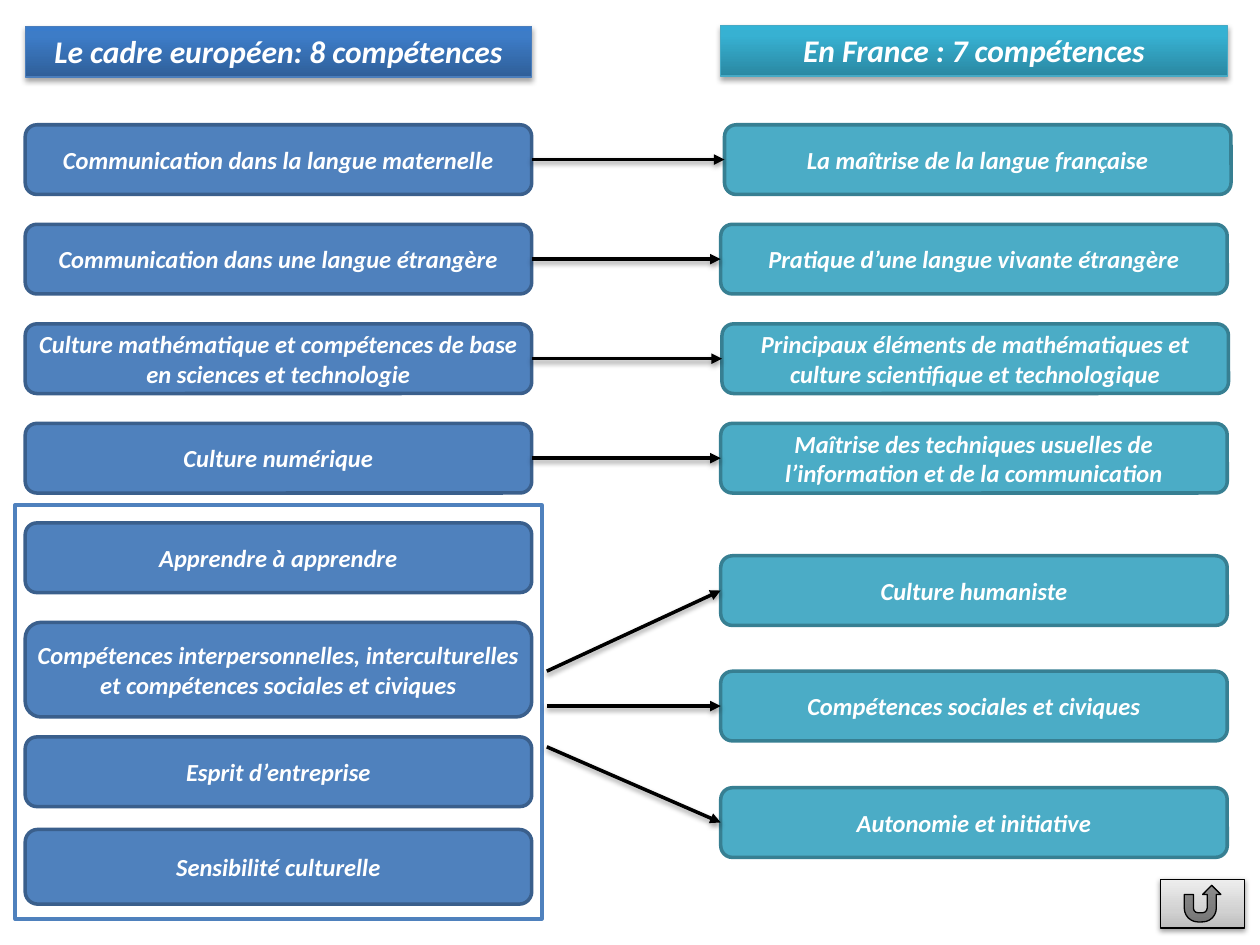
from lxml import etree
from pptx import Presentation
from pptx import util as u
from pptx.dml.color import RGBColor
from pptx.enum import shapes, text
from pptx.oxml.ns import qn


def color(value):
    return RGBColor.from_string(value)


class Board:
    """Style and current slide; lengths are grid columns and rows."""

    FONT = "Calibri"
    COLUMN, ROW = 1, 0.79  # inches
    TOP = 0.2              # top of row 0
    BOX_WIDTH = 4.02

    def __init__(self, slide):
        self.slide = slide

    def x(self, column):
        return u.Inches(column * self.COLUMN)

    def y(self, row):
        return u.Inches(self.TOP + row * self.ROW)

    def shape(self, kind, column, row, width, height, line, line_width):
        shape = self.slide.shapes.add_shape(
            kind, self.x(column), self.y(row),
            self.x(width), u.Inches(height * self.ROW))
        shape.shadow.inherit = False
        shape.line.color.rgb = color(line)
        shape.line.width = u.Pt(line_width)
        return shape

    def solid(self, shape, value):
        shape.fill.solid()
        shape.fill.fore_color.rgb = color(value)

    def gradient(self, shape, stops):
        shape.fill.gradient()
        shape.fill.gradient_angle = 90
        stop_list = shape._element.spPr.find(".//" + qn("a:gsLst"))
        for stop in list(stop_list):
            stop_list.remove(stop)
        for position, value in stops:
            stop = etree.SubElement(stop_list, qn("a:gs"), pos=str(position * 1000))
            etree.SubElement(stop, qn("a:srgbClr"), val=value)

    def shadow(self, properties, distance, opacity):
        effects = properties.find(qn("a:effectLst"))
        if effects is None:
            effects = etree.SubElement(properties, qn("a:effectLst"))
        shadow = etree.SubElement(
            effects, qn("a:outerShdw"), blurRad=str(u.Pt(3.1)),
            dist=str(u.Pt(distance)), dir="5400000", rotWithShape="0")
        black = etree.SubElement(shadow, qn("a:srgbClr"), val="000000")
        etree.SubElement(black, qn("a:alpha"), val=str(opacity * 1000))

    def label(self, shape, words, size):
        frame = shape.text_frame
        frame.word_wrap = True
        frame.text = words
        paragraph = frame.paragraphs[0]
        paragraph.alignment = text.PP_ALIGN.CENTER
        font = paragraph.runs[0].font
        font.name, font.size = self.FONT, u.Pt(size)
        font.bold = font.italic = True
        font.color.rgb = color("FFFFFF")
        return frame

    def frame(self, column, row, width, height, line):
        shape = self.shape(shapes.MSO_SHAPE.RECTANGLE, column, row, width, height, line, 2)
        self.solid(shape, "FFFFFF")

    def header(self, column, row, words, stops, line):
        shape = self.shape(shapes.MSO_SHAPE.RECTANGLE, column, row,
                           self.BOX_WIDTH, 0.51, line, 0.75)
        self.gradient(shape, stops)
        self.shadow(shape._element.spPr, 1.8, 35)
        frame = self.label(shape, words, 18)
        frame.vertical_anchor = text.MSO_ANCHOR.TOP
        frame.auto_size = text.MSO_AUTO_SIZE.SHAPE_TO_FIT_TEXT

    def box(self, column, row, words, fill, line, height=0.7):
        shape = self.shape(shapes.MSO_SHAPE.ROUNDED_RECTANGLE, column, row,
                           self.BOX_WIDTH, height, line, 2)
        self.solid(shape, fill)
        frame = self.label(shape, words, 14)
        frame.vertical_anchor = text.MSO_ANCHOR.MIDDLE
        frame.margin_left = frame.margin_right = u.Inches(0.04)
        return shape

    def arrow(self, target, source=None, start=(0, 0)):
        """Arrow to the left side of target, from a box or a grid point."""
        begin = self.x(start[0]), self.y(start[1])
        connector = self.slide.shapes.add_connector(
            shapes.MSO_CONNECTOR.STRAIGHT, *begin, *begin)
        if source is not None:
            connector.begin_connect(source, 3)
        connector.end_connect(target, 1)
        connector.line.color.rgb = color("000000")
        connector.line.width = u.Pt(2)
        outline = connector._element.spPr.find(qn("a:ln"))
        etree.SubElement(outline, qn("a:tailEnd"), type="triangle")
        self.shadow(connector._element.spPr, 1.6, 38)

    def return_button(self, column, row, width, height):
        shape = self.shape(shapes.MSO_SHAPE.ACTION_BUTTON_RETURN,
                           column, row, width, height, "000000", 0.75)
        self.gradient(shape, [(0, "BDBDBD"), (35, "D1D1D1"), (100, "EEEEEE")])
        self.shadow(shape._element.spPr, 1.6, 38)


LEFT, RIGHT = 0.2, 5.72
BLUE = ("4F81BD", "3A5F8C")
TEAL = ("4BACC6", "377F92")

# (row, words, height in rows)
EUROPE = [
    (1, "Communication dans la langue maternelle", 0.7),
    (2, "Communication dans une langue étrangère", 0.7),
    (3, "Culture mathématique et compétences de base en sciences et technologie", 0.7),
    (4, "Culture numérique", 0.7),
    (5, "Apprendre à apprendre", 0.7),
    (6, "Compétences interpersonnelles, interculturelles et compétences sociales et civiques", 0.95),
    (7.15, "Esprit d’entreprise", 0.7),
    (8.08, "Sensibilité culturelle", 0.75),
]
# (column, row, words)
FRANCE = [
    (RIGHT + 0.03, 1, "La maîtrise de la langue française"),
    (RIGHT, 2, "Pratique d’une langue vivante étrangère"),
    (RIGHT + 0.01, 3, "Principaux éléments de mathématiques et culture scientifique et technologique"),
    (RIGHT, 4, "Maîtrise des techniques usuelles de l’information et de la communication"),
    (RIGHT, 5.33, "Culture humaniste"),
    (RIGHT, 6.49, "Compétences sociales et civiques"),
    (RIGHT, 7.66, "Autonomie et initiative"),
]


def main():
    presentation = Presentation()
    presentation.slide_width, presentation.slide_height = u.Inches(10), u.Inches(7.5)
    board = Board(presentation.slides.add_slide(presentation.slide_layouts[6]))

    # Frame around the last four European competences
    board.frame(0.12, 4.82, 4.18, 4.16, "4F81BD")

    # Column headers
    board.header(LEFT, 0.01, "Le cadre européen: 8 compétences",
                 [(0, "2F5F99"), (80, "3D7CC7"), (100, "3A7CCB")], "4B7EBC")
    board.header(RIGHT, 0, "En France : 7 compétences",
                 [(0, "2A88A2"), (80, "37B1D2"), (100, "34B4D6")], "46AAC5")

    # Competence boxes
    europe = [board.box(LEFT, row, words, *BLUE, height) for row, words, height in EUROPE]
    france = [board.box(column, row, words, *TEAL) for column, row, words in FRANCE]

    # One-to-one arrows, then arrows from the framed group
    for source, target in zip(europe[:4], france):
        board.arrow(target, source)
    for row, target in zip((6.49, 6.84, 7.25), france[4:]):
        board.arrow(target, start=(4.34, row))

    # Return button
    board.return_button(9.21, 8.58, 0.67, 0.49)
    presentation.save("out.pptx")


if __name__ == "__main__":
    main()
